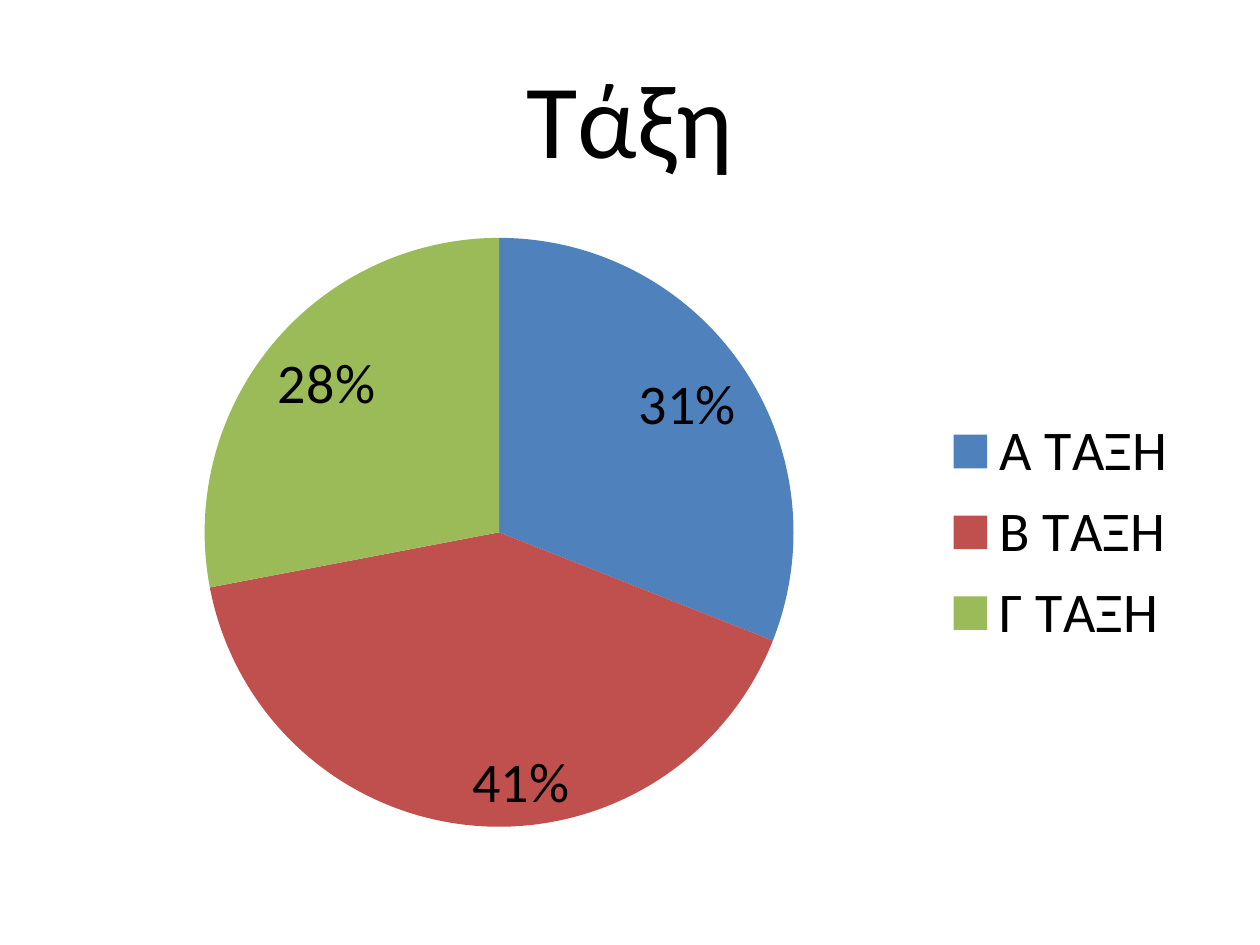
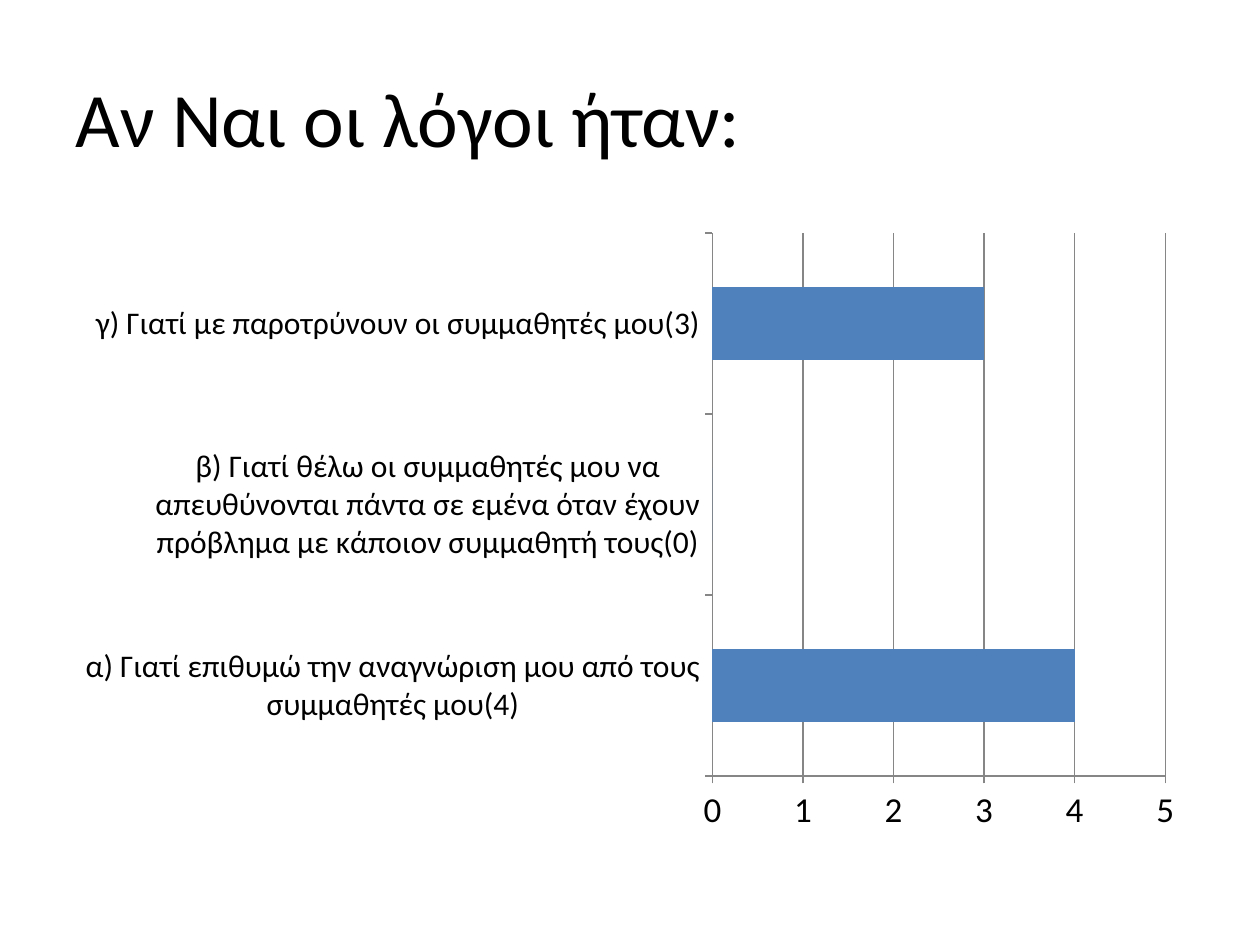
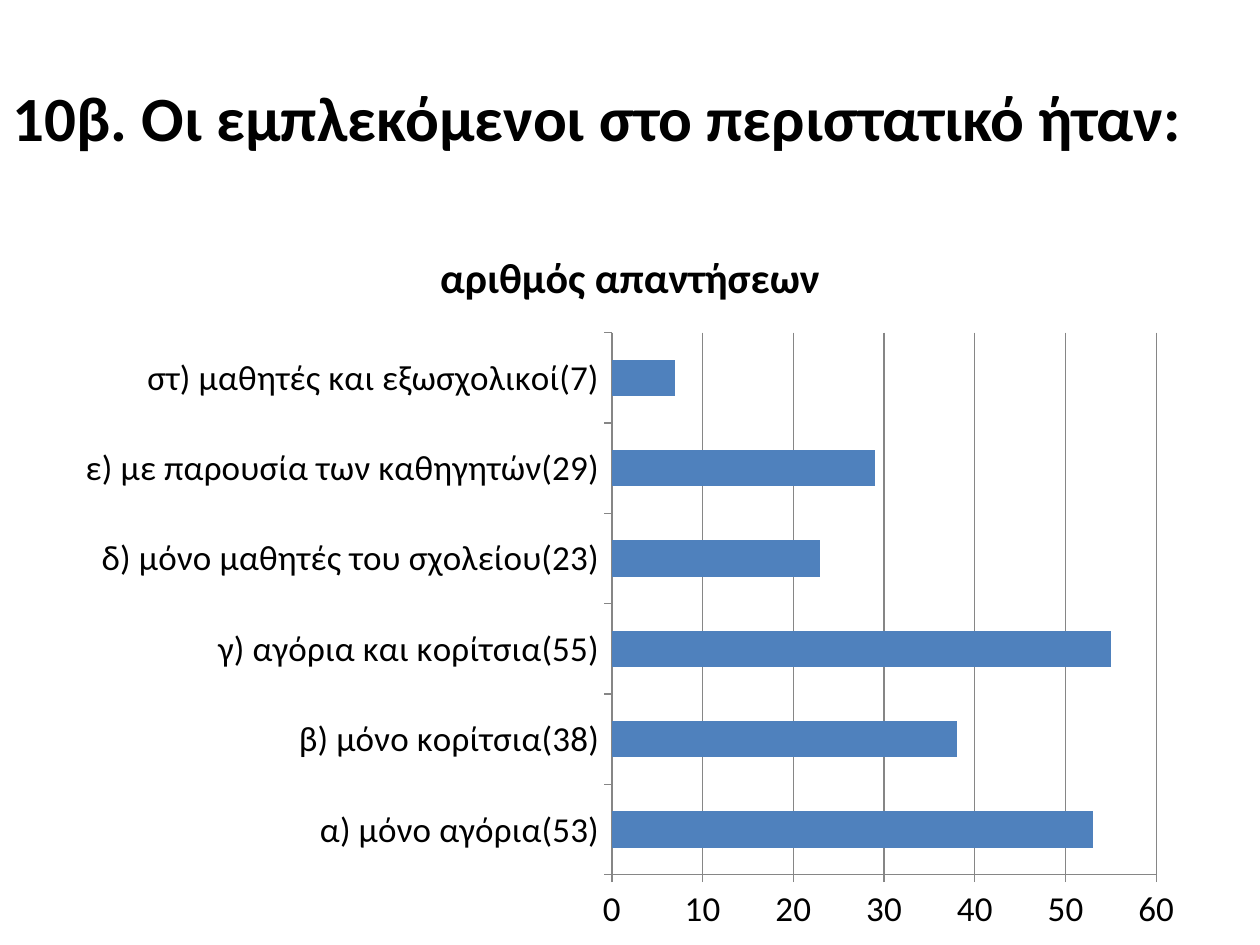
from pptx import Presentation
from pptx.chart.data import CategoryChartData
from pptx.dml.color import RGBColor
from pptx.enum.chart import XL_CHART_TYPE, XL_LABEL_POSITION, XL_LEGEND_POSITION, XL_TICK_MARK
from pptx.enum.text import MSO_ANCHOR, PP_ALIGN
from pptx.util import Inches, Pt

BLACK = RGBColor(0x00, 0x00, 0x00)
GREY = RGBColor(0x86, 0x86, 0x86)
BLUE = RGBColor(0x4F, 0x81, 0xBD)
RED = RGBColor(0xC0, 0x50, 0x4D)
GREEN = RGBColor(0x9B, 0xBB, 0x59)
FONT = "Calibri"

# Boxes are left, top, width, height in inches
TITLE_BOX = (0.5, 0.3, 9, 1.25)
CHART_BOX = (0.5, 1.75, 9, 4.95)

GRADES = {"Α ΤΑΞΗ": 0.31, "Β ΤΑΞΗ": 0.41, "Γ ΤΑΞΗ": 0.28}
GRADE_COLOURS = (BLUE, RED, GREEN)

REASONS = {
    "α) Γιατί επιθυμώ την αναγνώριση μου από τους συμμαθητές μου(4)": 4,
    "β) Γιατί θέλω οι συμμαθητές μου να απευθύνονται πάντα σε εμένα "
    "όταν έχουν πρόβλημα με κάποιον συμμαθητή τους(0)": 0,
    "γ) Γιατί με παροτρύνουν οι συμμαθητές μου(3)": 3,
}

PARTICIPANTS = {
    "α) μόνο αγόρια(53)": 53,
    "β) μόνο κορίτσια(38)": 38,
    "γ) αγόρια και κορίτσια(55)": 55,
    "δ) μόνο μαθητές του σχολείου(23)": 23,
    "ε) με παρουσία των καθηγητών(29)": 29,
    "στ) μαθητές και εξωσχολικοί(7)": 7,
}


def style(font, size, bold=False):
    font.name = FONT
    font.size = Pt(size)
    font.bold = bold
    font.color.rgb = BLACK


def add_titled_slide(deck, heading, size, bold=False, align=PP_ALIGN.LEFT, box=TITLE_BOX):
    slide = deck.slides.add_slide(deck.slide_layouts[5])
    title = slide.shapes.title
    title.left, title.top, title.width, title.height = map(Inches, box)
    title.text_frame.vertical_anchor = MSO_ANCHOR.MIDDLE
    paragraph = title.text_frame.paragraphs[0]
    paragraph.alignment = align
    run = paragraph.add_run()
    run.text = heading
    style(run.font, size, bold)
    return slide


def add_chart(slide, kind, answers, box=CHART_BOX, number_format="General"):
    data = CategoryChartData(number_format=number_format)
    data.categories = list(answers)
    data.add_series("Series 1", list(answers.values()))
    chart = slide.shapes.add_chart(kind, *map(Inches, box), data).chart
    style(chart.font, 10)
    chart.has_title = False
    chart.has_legend = False
    return chart


def add_pie(slide, answers, colours, size):
    chart = add_chart(slide, XL_CHART_TYPE.PIE, answers, number_format="0%")
    plot = chart.plots[0]
    plot.vary_by_categories = True
    for index, colour in enumerate(colours):
        fill = plot.series[0].points[index].format.fill
        fill.solid()
        fill.fore_color.rgb = colour

    labels = plot.series[0].data_labels
    labels.show_value = True
    labels.number_format = "0%"
    labels.number_format_is_linked = False
    labels.position = XL_LABEL_POSITION.INSIDE_END
    style(labels.font, size)

    chart.has_legend = True
    chart.legend.position = XL_LEGEND_POSITION.RIGHT
    chart.legend.include_in_layout = False
    style(chart.legend.font, size)


def add_bars(slide, answers, top, step, category_size, box=CHART_BOX, heading=None):
    """Draw horizontal bars on a scale from 0 to top, with a gridline at each step."""
    chart = add_chart(slide, XL_CHART_TYPE.BAR_CLUSTERED, answers, box)
    plot = chart.plots[0]
    plot.vary_by_categories = False
    plot.gap_width = 150
    fill = plot.series[0].format.fill
    fill.solid()
    fill.fore_color.rgb = BLUE

    scale = chart.value_axis
    scale.minimum_scale, scale.maximum_scale, scale.major_unit = 0, top, step
    scale.has_major_gridlines = True
    scale.major_gridlines.format.line.color.rgb = GREY
    for axis, size in ((chart.category_axis, category_size), (scale, 20)):
        axis.major_tick_mark = XL_TICK_MARK.OUTSIDE
        axis.format.line.color.rgb = GREY
        style(axis.tick_labels.font, size)

    if heading:
        chart.has_title = True
        chart.chart_title.include_in_layout = False
        run = chart.chart_title.text_frame.paragraphs[0].add_run()
        run.text = heading
        style(run.font, 24, bold=True)


def main():
    deck = Presentation()
    deck.slide_width, deck.slide_height = Inches(10), Inches(7.5)

    grade = add_titled_slide(deck, "Τάξη", 60, align=PP_ALIGN.CENTER)
    add_pie(grade, GRADES, GRADE_COLOURS, 32)

    reasons = add_titled_slide(deck, "Αν Ναι οι λόγοι ήταν:", 44)
    add_bars(reasons, REASONS, 5, 1, 18)

    participants = add_titled_slide(
        deck, "10β. Οι εμπλεκόμενοι στο περιστατικό ήταν:", 36, bold=True,
        box=(0, 0.3, 9.5, 1.25))
    add_bars(participants, PARTICIPANTS, 60, 10, 20,
             box=(0.5, 1.75, 9, 5.75), heading="αριθμός απαντήσεων")

    deck.save("out.pptx")


if __name__ == "__main__":
    main()
